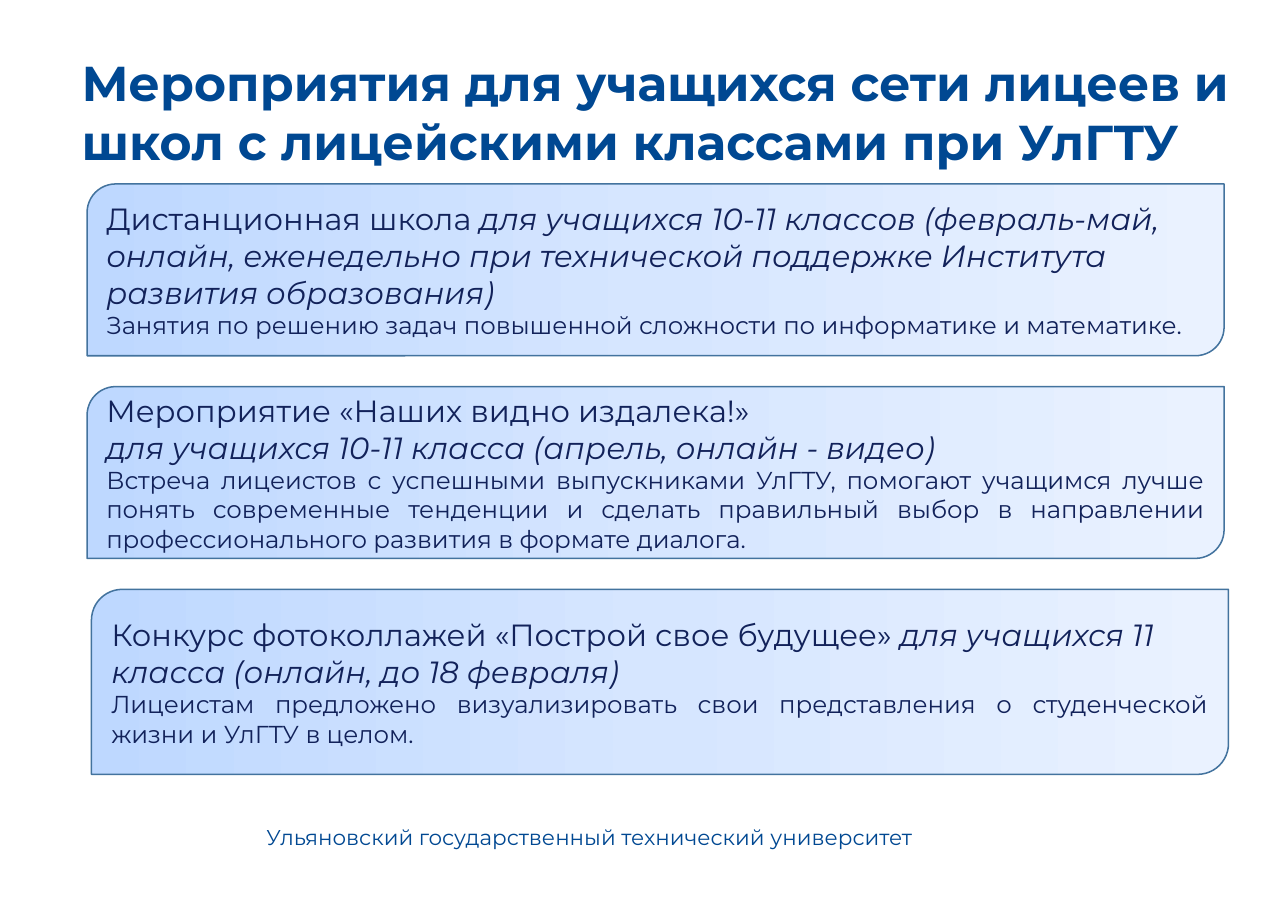
from copy import deepcopy

from pptx import Presentation
from pptx.dml.color import RGBColor
from pptx.enum import shapes, text
from pptx.util import Inches, Pt

# Content: each card has paragraphs of (style, text) runs
TITLE = "Мероприятия для учащихся сети лицеев и школ с лицейскими классами при УлГТУ"
FOOTER = "Ульяновский государственный технический университет"
CARDS = [
    [
        [("name", "Дистанционная школа "),
         ("audience", "для учащихся 10-11 классов (февраль-май, онлайн, еженедельно "
                      "при технической поддержке Института развития образования)")],
        [("details", "Занятия по решению задач повышенной сложности "
                     "по информатике и математике.")],
    ],
    [
        [("name", "Мероприятие «Наших видно издалека!»")],
        [("audience", "для учащихся 10-11 класса (апрель, онлайн - видео)")],
        [("details", "Встреча лицеистов с успешными выпускниками УлГТУ, помогают "
                     "учащимся лучше понять современные тенденции и сделать правильный "
                     "выбор в направлении профессионального развития в формате диалога.")],
    ],
    [
        [("name", "Конкурс фотоколлажей «Построй свое будущее» "),
         ("audience", "для учащихся 11 класса (онлайн, до 18 февраля)")],
        [("details", "Лицеистам предложено визуализировать свои представления "
                     "о студенческой жизни и УлГТУ в целом.")],
    ],
]

# Style
FONT = "Montserrat"
BLUE = RGBColor(0x00, 0x48, 0x92)
NAVY = RGBColor(0x12, 0x22, 0x5A)
OUTLINE = RGBColor(0x43, 0x73, 0x9E)
GRADIENT = [RGBColor(0xBE, 0xD8, 0xFF), RGBColor(0xD6, 0xE6, 0xFF), RGBColor(0xEA, 0xF2, 0xFF)]
STYLES = {"name": (20, False), "audience": (20, True), "details": (16, False)}

# Layout in inches: one column of cards at an equal pitch
PAGE_WIDTH, PAGE_HEIGHT = 11.69, 8.27
CARD_TOP, CARD_PITCH, CARD_WIDTH = 1.67, 1.84, 10.32
CARD_SIZES = [(0.79, 1.56), (0.79, 1.56), (0.83, 1.68)]  # left, height


def add_span(para, content, size, color, bold=False, italic=False):
    span = para.add_run()
    span.text = content
    font = span.font
    font.name, font.size, font.bold, font.italic = FONT, Pt(size), bold, italic
    font.color.rgb = color


def fill_gradient(card):
    card.fill.gradient()
    card.fill.gradient_angle = 0
    first = card.fill.gradient_stops[0]._gs
    first.addnext(deepcopy(first))
    for index, (stop, color) in enumerate(zip(card.fill.gradient_stops, GRADIENT)):
        stop.position = index / (len(GRADIENT) - 1)
        stop.color.rgb = color


def add_card(page, left, top, height, paragraphs):
    card = page.shapes.add_shape(
        shapes.MSO_SHAPE.ROUND_2_DIAG_RECTANGLE,
        Inches(left), Inches(top), Inches(CARD_WIDTH), Inches(height))
    card.shadow.inherit = False
    fill_gradient(card)
    card.line.color.rgb = OUTLINE
    card.line.width = Pt(1)
    frame = card.text_frame
    frame.word_wrap = True
    frame.vertical_anchor = text.MSO_ANCHOR.MIDDLE
    for index, spans in enumerate(paragraphs):
        para = frame.add_paragraph() if index else frame.paragraphs[0]
        is_details = spans[0][0] == "details"
        para.alignment = text.PP_ALIGN.JUSTIFY if is_details else text.PP_ALIGN.LEFT
        for style, content in spans:
            size, italic = STYLES[style]
            add_span(para, content, size, NAVY, italic=italic)


def main():
    deck = Presentation()
    deck.slide_width, deck.slide_height = Inches(PAGE_WIDTH), Inches(PAGE_HEIGHT)
    page = deck.slides.add_slide(deck.slide_layouts[5])

    # Title
    title = page.shapes.title
    title.left, title.top = Inches(0.64), Inches(0.43)
    title.width, title.height = Inches(10.85), Inches(2.51)
    frame = title.text_frame
    frame.word_wrap = True
    frame.auto_size = text.MSO_AUTO_SIZE.NONE
    frame.vertical_anchor = text.MSO_ANCHOR.TOP
    frame.paragraphs[0].alignment = text.PP_ALIGN.LEFT
    add_span(frame.paragraphs[0], TITLE, 32, BLUE, bold=True)

    # University name at the foot
    footer = page.shapes.add_textbox(Inches(2.32), Inches(7.43), Inches(6.2), Inches(0.39))
    footer.text_frame.word_wrap = True
    add_span(footer.text_frame.paragraphs[0], FOOTER, 14, BLUE)

    # Event cards
    for row, ((left, height), paragraphs) in enumerate(zip(CARD_SIZES, CARDS)):
        add_card(page, left, CARD_TOP + row * CARD_PITCH, height, paragraphs)

    deck.save("out.pptx")


if __name__ == "__main__":
    main()
